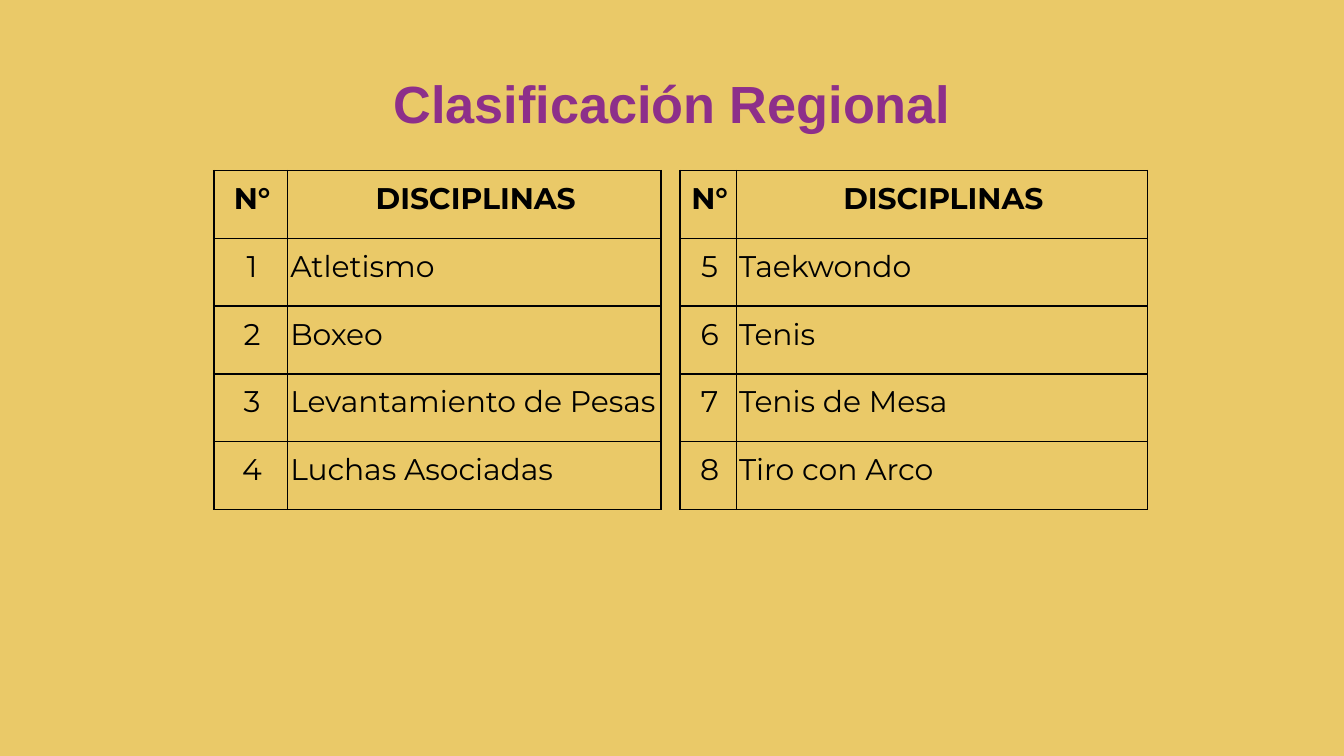
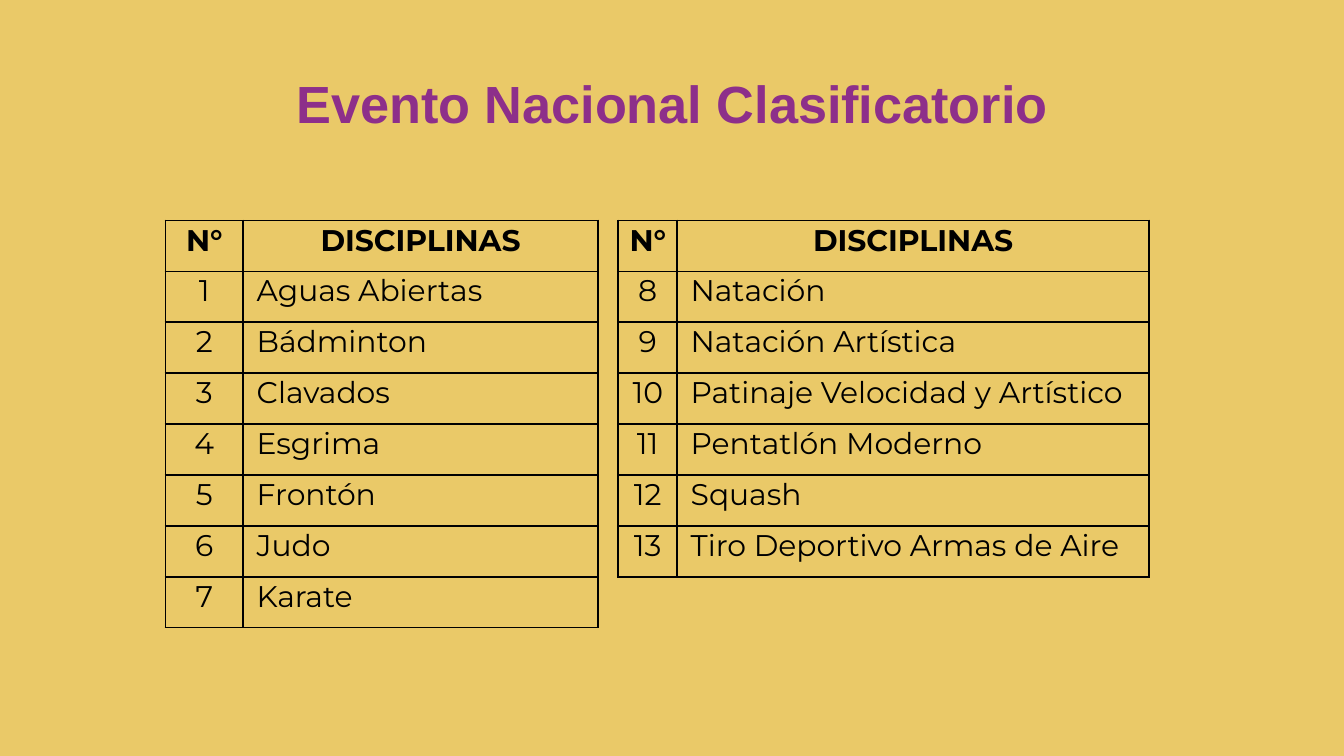
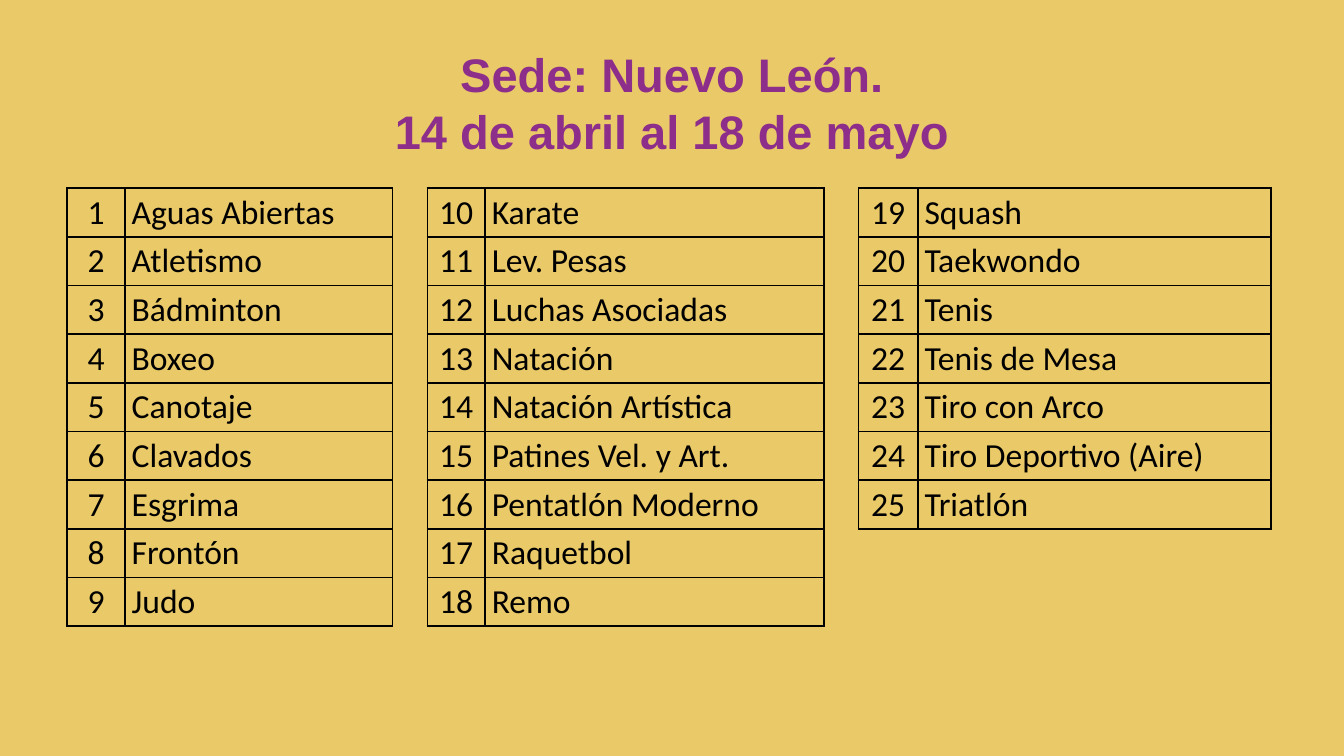
"""Build three slides listing sports disciplines by qualifying stage and venue."""
from lxml import etree
from pptx import Presentation
from pptx.dml.color import RGBColor
from pptx.enum.text import MSO_ANCHOR, PP_ALIGN
from pptx.oxml.ns import qn
from pptx.util import Inches, Pt

CENTER, LEFT = PP_ALIGN.CENTER, PP_ALIGN.LEFT
MIDDLE = MSO_ANCHOR.MIDDLE
SAND = RGBColor(0xEA, 0xC9, 0x68)
PURPLE = RGBColor(0x8D, 0x2F, 0x8A)
BLACK = RGBColor(0x00, 0x00, 0x00)

PAGE_WIDTH = 10
PAGE_HEIGHT = PAGE_WIDTH * 9 / 16
TITLE_AREA = (0.5, 0.29, 9, 0.94)
BORDER_WIDTH = Pt(1)
HEADINGS = ("N°", "DISCIPLINAS")
SIDES = {"a:lnL": (0, -1), "a:lnR": (0, 1), "a:lnT": (-1, 0), "a:lnB": (1, 0)}

MONTSERRAT = {"font": "Montserrat", "size": 16, "spacing": Pt(12), "headed": True}
CALIBRI = {"font": "Calibri", "size": 18, "spacing": None, "headed": False}

PAGES = [
    {
        "title": ["Clasificación Regional"], "title_size": 28,
        "left": 1.59, "top": 1.27, "height": 2.52, "gap": 0.14,
        "style": MONTSERRAT, "insets": (0.02, 0.04, 0, 0.02), "indent": 0,
        "groups": [
            (0.55, 2.78, ["Atletismo", "Boxeo", "Levantamiento de Pesas",
                          "Luchas Asociadas"]),
            (0.42, 3.06, ["Taekwondo", "Tenis", "Tenis de Mesa", "Tiro con Arco"]),
        ],
    },
    {
        "title": ["Evento Nacional Clasificatorio"], "title_size": 28,
        "left": 1.23, "top": 1.64, "height": 3.03, "gap": 0.15,
        "style": MONTSERRAT, "insets": (0, 0.04, 0, 0.02), "indent": 0.1,
        "groups": [
            (0.58, 2.64, ["Aguas Abiertas", "Bádminton", "Clavados", "Esgrima",
                          "Frontón", "Judo", "Karate"]),
            (0.44, 3.51, ["Natación", "Natación Artística",
                          "Patinaje Velocidad y Artístico", "Pentatlón Moderno",
                          "Squash", "Tiro Deportivo Armas de Aire"]),
        ],
    },
    {
        "title": ["Sede: Nuevo León.", "14 de abril al 18 de mayo"], "title_size": 25.2,
        "left": 0.5, "top": 1.4, "height": 3.26, "gap": 0.26,
        "style": CALIBRI, "insets": (0.05, 0, 0.05, 0), "indent": 0,
        "groups": [
            (0.43, 1.99, ["Aguas Abiertas", "Atletismo", "Bádminton", "Boxeo",
                          "Canotaje", "Clavados", "Esgrima", "Frontón", "Judo"]),
            (0.43, 2.52, ["Karate", "Lev. Pesas", "Luchas Asociadas", "Natación",
                          "Natación Artística", "Patines Vel. y Art.",
                          "Pentatlón Moderno", "Raquetbol", "Remo"]),
            (0.44, 2.63, ["Squash", "Taekwondo", "Tenis", "Tenis de Mesa",
                          "Tiro con Arco", "Tiro Deportivo (Aire)", "Triatlón"]),
        ],
    },
]


def add_span(para, text, font, size, color, bold):
    span = para.add_run()
    span.text = text
    span.font.name = font
    span.font.size = Pt(size)
    span.font.bold = bold
    span.font.color.rgb = color


def add_title(page, lines, size):
    box = page.shapes.add_textbox(*map(Inches, TITLE_AREA))
    frame = box.text_frame
    frame.word_wrap = True
    frame.vertical_anchor = MIDDLE
    para = frame.paragraphs[0]
    para.alignment = CENTER
    for index, line in enumerate(lines):
        if index:
            para.add_line_break()
        add_span(para, line, "Arial", size, PURPLE, True)


def lay_out(content):
    """Return the column widths and the text of each filled grid position."""
    widths, texts, number = [], {}, 1
    headed = content["style"]["headed"]
    for number_width, name_width, names in content["groups"]:
        if widths:
            widths.append(content["gap"])
        column = len(widths)
        widths += [number_width, name_width]
        rows = [HEADINGS] if headed else []
        rows += [(str(count), name) for count, name in enumerate(names, number)]
        number += len(names)
        for row, pair in enumerate(rows):
            texts[row, column], texts[row, column + 1] = pair
    return widths, texts


def set_borders(cell, position, texts):
    properties = cell._tc.get_or_add_tcPr()
    row, column = position
    for index, (tag, (down, across)) in enumerate(SIDES.items()):
        line = etree.Element(qn(tag), w=str(BORDER_WIDTH))
        if position in texts or (row + down, column + across) in texts:
            fill = etree.SubElement(line, qn("a:solidFill"))
            etree.SubElement(fill, qn("a:srgbClr"), val=str(BLACK))
        else:
            etree.SubElement(line, qn("a:noFill"))
        properties.insert(index, line)


def fill_cell(cell, text, content, heading, numeric):
    style = content["style"]
    para = cell.text_frame.paragraphs[0]
    centered = heading or numeric
    para.alignment = CENTER if centered else LEFT
    if style["spacing"]:
        para.line_spacing = style["spacing"]
    if content["indent"] and not centered:
        para._p.get_or_add_pPr().set("marL", str(Inches(content["indent"])))
    add_span(para, text, style["font"], style["size"], BLACK, heading)


def add_disciplines(page, content):
    widths, texts = lay_out(content)
    row_count = max(row for row, _ in texts) + 1
    area = (content["left"], content["top"], sum(widths), content["height"])
    table = page.shapes.add_table(row_count, len(widths), *map(Inches, area)).table
    table.first_row = table.horz_banding = False
    for column, width in zip(table.columns, widths):
        column.width = Inches(width)
    for row_index, row in enumerate(table.rows):
        row.height = Inches(content["height"] / row_count)
        for column_index, cell in enumerate(row.cells):
            position = (row_index, column_index)
            cell.fill.background()
            cell.vertical_anchor = MIDDLE
            (cell.margin_left, cell.margin_top, cell.margin_right,
             cell.margin_bottom) = map(Inches, content["insets"])
            set_borders(cell, position, texts)
            if position in texts:
                heading = content["style"]["headed"] and row_index == 0
                fill_cell(cell, texts[position], content, heading, column_index % 3 == 0)


def main():
    deck = Presentation()
    deck.slide_width, deck.slide_height = Inches(PAGE_WIDTH), Inches(PAGE_HEIGHT)
    for content in PAGES:
        page = deck.slides.add_slide(deck.slide_layouts[6])
        page.background.fill.solid()
        page.background.fill.fore_color.rgb = SAND
        add_title(page, content["title"], content["title_size"])
        add_disciplines(page, content)
    deck.save("out.pptx")


if __name__ == "__main__":
    main()
